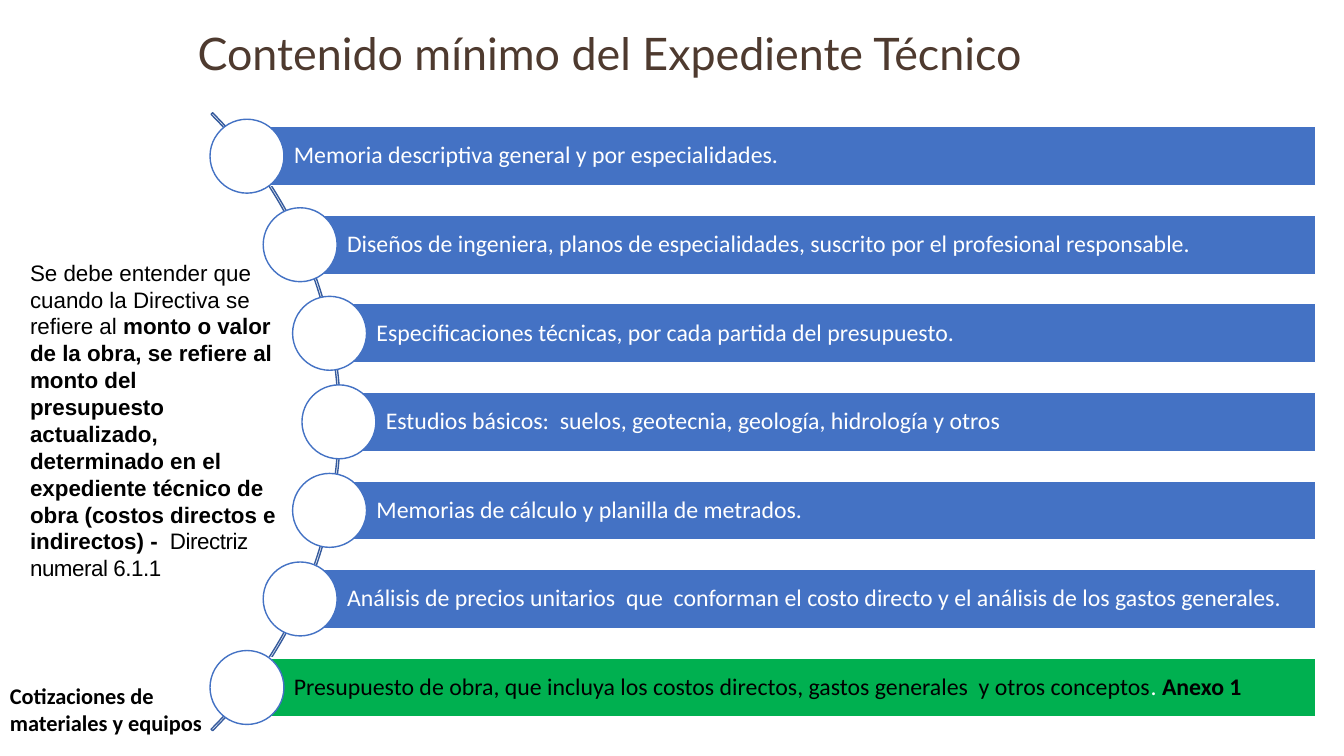
"""Build the slide on the minimum contents of a technical file."""
from dataclasses import dataclass
from typing import Optional

from lxml import etree
from pptx import Presentation, util as u
from pptx.dml.color import RGBColor
from pptx.enum import shapes, text

COLORS = {"blue": "4472C4", "arc": "365B9D", "green": "00B050",
          "white": "FFFFFF", "black": "000000", "title": "4E3A2F"}
BAR_LEFTS = (242.1, 235.4, 214.4, 176.4)
BAR_RIGHT, BAR_HEIGHT, CIRCLE = 939.6, 42.2, 52.8
MIDDLE, PITCH = 301.3, 63.25
ARC_LEFT, ARC_SIZE = -380.9, 624.2


@dataclass(frozen=True)
class Piece:
    words: str
    bold: Optional[bool] = None
    color: Optional[str] = None
    spacing: Optional[float] = None


@dataclass(frozen=True)
class Style:
    font: str
    size: float
    color: str = "black"
    bold: bool = False
    line_spacing: float = 1.0


@dataclass(frozen=True)
class Row:
    pieces: tuple[Piece, ...]
    fill: str = "blue"
    color: str = "white"


@dataclass(frozen=True)
class Label:
    box: tuple[float, float, float, float]
    style: Style
    pieces: tuple[Piece, ...]
    margins: tuple[float, float, float, float] = (7.2, 3.6, 7.2, 3.6)
    anchor: text.MSO_ANCHOR = text.MSO_ANCHOR.TOP


ROWS = (
    Row((Piece("Memoria descriptiva general y por especialidades."),)),
    Row((Piece("Diseños de ingeniera, planos de especialidades, suscrito por el "
               "profesional responsable."),)),
    Row((Piece("Especificaciones técnicas, por cada partida del presupuesto."),)),
    Row((Piece("Estudios básicos:  suelos, geotecnia, geología, hidrología y otros"),)),
    Row((Piece("Memorias de cálculo y planilla de metrados."),)),
    Row((Piece("Análisis de precios unitarios  que  conforman el costo directo y el "
               "análisis de los gastos generales."),)),
    Row((Piece("Presupuesto de obra, que incluya los costos directos, gastos generales"
               "  y otros conceptos"),
         Piece(". ", color="white"), Piece("Anexo 1", bold=True)), "green", "black"),
)
TITLE = Label((141.1, 20.9, 673.2, 38.9), Style("Lato", 32, "title", line_spacing=0.9),
              (Piece("Contenido mínimo del Expediente Técnico"),),
              (0, 0, 0, 0), text.MSO_ANCHOR.MIDDLE)
NOTES = (
    Label((0, 483.8, 160.6, 46.1), Style("Calibri", 16, bold=True),
          (Piece("Cotizaciones de materiales y equipos"),)),
    Label((14.4, 181.4, 190.1, 239.8), Style("Arial", 16),
          (Piece("Se debe entender que cuando la Directiva se refiere al "),
           Piece("monto o valor de la obra, se refiere al monto del presupuesto "
                 "actualizado, determinado en el expediente técnico de obra "
                 "(costos directos e indirectos) - ", bold=True),
           Piece(" Directriz numeral 6.1.1", spacing=-0.3))),
)


def rgb(name: str) -> RGBColor:
    return RGBColor.from_string(COLORS[name])


def write(shape, pieces: tuple[Piece, ...], style: Style,
          margins: tuple[float, float, float, float], anchor: text.MSO_ANCHOR) -> None:
    frame = shape.text_frame
    frame.word_wrap = True
    frame.vertical_anchor = anchor
    (frame.margin_left, frame.margin_top,
     frame.margin_right, frame.margin_bottom) = map(u.Pt, margins)
    paragraph = frame.paragraphs[0]
    paragraph.alignment = text.PP_ALIGN.LEFT
    paragraph.line_spacing = style.line_spacing
    paragraph.font.name = style.font
    paragraph.font.size = u.Pt(style.size)
    paragraph.font.bold = style.bold
    paragraph.font.color.rgb = rgb(style.color)
    for piece in pieces:
        run = paragraph.add_run()
        run.text = piece.words
        if piece.bold is not None:
            run.font.bold = piece.bold
        if piece.color:
            run.font.color.rgb = rgb(piece.color)
        if piece.spacing is not None:
            properties: etree._Element = run._r.get_or_add_rPr()
            properties.set("spc", str(round(piece.spacing * 100)))


def add_preset(slide, kind: shapes.MSO_SHAPE, box: tuple[float, float, float, float],
               line: str, fill: Optional[str] = None):
    shape = slide.shapes.add_shape(kind, *map(u.Pt, box))
    shape.shadow.inherit = False
    shape.line.color.rgb = rgb(line)
    shape.line.width = u.Pt(1)
    if fill:
        shape.fill.solid()
        shape.fill.fore_color.rgb = rgb(fill)
    else:
        shape.fill.background()
    return shape


def add_label(slide, label: Label) -> None:
    shape = slide.shapes.add_textbox(*map(u.Pt, label.box))
    write(shape, label.pieces, label.style, label.margins, label.anchor)


def add_arc(slide) -> None:
    box = (ARC_LEFT, MIDDLE - ARC_SIZE / 2, ARC_SIZE, ARC_SIZE)
    arc = add_preset(slide, shapes.MSO_SHAPE.BLOCK_ARC, box, "arc")
    for index, value in enumerate((189, 27, 0.25 / 100)):
        arc.adjustments[index] = value


def add_row(slide, row: Row, offset: int) -> None:
    left, center = BAR_LEFTS[abs(offset)], MIDDLE + offset * PITCH
    bar = add_preset(slide, shapes.MSO_SHAPE.RECTANGLE,
                     (left, center - BAR_HEIGHT / 2, BAR_RIGHT - left, BAR_HEIGHT),
                     "white", row.fill)
    write(bar, row.pieces, Style("Calibri", 17, row.color, line_spacing=0.9),
          (33.5, 3.6, 3.6, 3.6), text.MSO_ANCHOR.MIDDLE)
    add_preset(slide, shapes.MSO_SHAPE.OVAL,
               (left - CIRCLE / 2, center - CIRCLE / 2, CIRCLE, CIRCLE), "blue", "white")


def main() -> None:
    presentation = Presentation()
    presentation.slide_width, presentation.slide_height = u.Pt(960), u.Pt(540)
    slide = presentation.slides.add_slide(presentation.slide_layouts[6])
    add_label(slide, TITLE)
    add_arc(slide)
    for index, row in enumerate(ROWS):
        add_row(slide, row, index - len(ROWS) // 2)
    for note in NOTES:
        add_label(slide, note)
    presentation.save("out.pptx")


if __name__ == "__main__":
    main()
